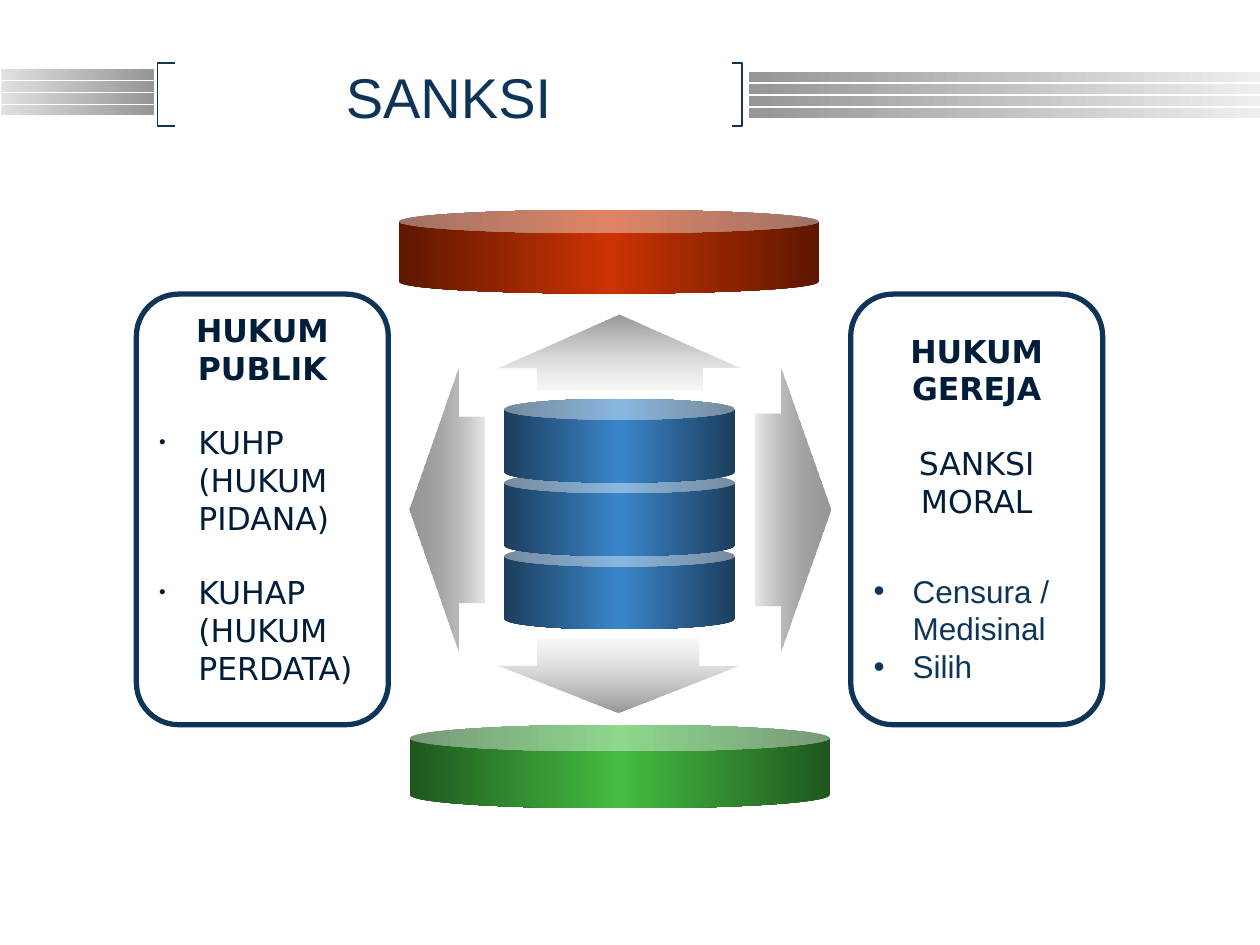
from lxml import etree
from pptx import Presentation
from pptx.dml.color import RGBColor
from pptx.enum.shapes import MSO_SHAPE
from pptx.enum.text import MSO_ANCHOR, PP_ALIGN
from pptx.oxml import parse_xml
from pptx.oxml.ns import nsdecls, qn
from pptx.util import Cm, Pt

RECTANGLE = MSO_SHAPE.RECTANGLE
ROUNDED = MSO_SHAPE.ROUNDED_RECTANGLE
CAN = MSO_SHAPE.CAN
LEFT, RIGHT = MSO_SHAPE.LEFT_ARROW, MSO_SHAPE.RIGHT_ARROW
UP, DOWN = MSO_SHAPE.UP_ARROW, MSO_SHAPE.DOWN_ARROW
CENTER, ALIGN_LEFT = PP_ALIGN.CENTER, PP_ALIGN.LEFT
MIDDLE, TOP = MSO_ANCHOR.MIDDLE, MSO_ANCHOR.TOP

NAVY, INK, GREY = "0E3558", "001D3A", "969696"
DARKEN = "<a:gamma/><a:shade val='46275'/><a:invGamma/>"
FADE = "<a:alpha val='12000'/>"
TITLE = {"name": "Arial", "size": Pt(32), "color": NAVY}
HEADING = {"name": "DejaVu Sans", "size": Pt(18), "bold": True, "color": INK}
BODY = {**HEADING, "bold": False}
SANCTION = {"name": "Arial", "size": Pt(18), "color": NAVY}
GAP = Pt(21)


def rgb(value):
    return RGBColor.from_string(value)


def fill_gradient(shape, stops, angle=0):
    marks = "".join(
        f"<a:gs pos='{position * 1000}'><a:srgbClr val='{color}'>{change}</a:srgbClr></a:gs>"
        for position, color, change in stops
    )
    gradient = parse_xml(
        f"<a:gradFill {nsdecls('a')} rotWithShape='1'><a:gsLst>{marks}</a:gsLst>"
        f"<a:lin ang='{angle * 60000}' scaled='1'/></a:gradFill>"
    )
    shape.element.spPr.find(qn("a:prstGeom")).addnext(gradient)


def add_block(page, kind, frame, stops, angle=0, adjustments=()):
    block = page.shapes.add_shape(kind, *map(Cm, frame))
    block.shadow.inherit = False
    for index, value in enumerate(adjustments):
        block.adjustments[index] = value
    fill_gradient(block, stops, angle)
    block.line.fill.background()


def add_can(page, frame, color, depth):
    stops = [(0, color, DARKEN), (50, color, ""), (100, color, DARKEN)]
    add_block(page, CAN, frame, stops, adjustments=[depth])


def add_stripes(page, left, top, width, step, colors):
    stops = [(0, colors[0], ""), (100, colors[1], "")]
    for row in range(4):
        add_block(page, RECTANGLE, (left, top + row * step, width, 0.21), stops)


def add_bracket(page, tip, spine):
    top, bottom = Cm(1.27), Cm(2.54)
    builder = page.shapes.build_freeform(Cm(tip), top)
    corners = [(Cm(spine), top), (Cm(spine), bottom), (Cm(tip), bottom)]
    builder.add_line_segments(corners, close=False)
    bracket = builder.convert_to_shape()
    bracket.shadow.inherit = False
    bracket.fill.background()
    bracket.line.color.rgb = rgb(NAVY)
    bracket.line.width = Pt(0.75)


def add_panel(page, left):
    panel = page.shapes.add_shape(ROUNDED, Cm(left), Cm(5.93), Cm(5.08), Cm(8.68))
    panel.shadow.inherit = False
    panel.adjustments[0] = 0.167
    panel.fill.background()
    panel.line.color.rgb = rgb(NAVY)
    panel.line.width = Pt(3)


def add_bullet(para, scale):
    properties = para._p.get_or_add_pPr()
    properties.set("marL", str(Cm(0.79)))
    properties.set("indent", str(Cm(-0.79)))
    etree.SubElement(properties, qn("a:buSzPct")).set("val", str(scale * 1000))
    etree.SubElement(properties, qn("a:buFont")).set("typeface", "Arial")
    etree.SubElement(properties, qn("a:buChar")).set("char", "•")


def add_text(page, frame, lines, anchor=TOP, spacing=None):
    box = page.shapes.add_textbox(*map(Cm, frame)).text_frame
    box.word_wrap = True
    box.vertical_anchor = anchor
    for index, (words, style, bullet, before) in enumerate(lines):
        para = box.paragraphs[0] if index == 0 else box.add_paragraph()
        para.alignment = ALIGN_LEFT if bullet else CENTER
        if spacing:
            para.line_spacing = spacing
        if before:
            para.space_before = before
        if bullet:
            add_bullet(para, bullet)
        span = para.add_run()
        span.text = words
        for name, value in style.items():
            if name == "color":
                span.font.color.rgb = rgb(value)
            else:
                setattr(span.font, name, value)


def add_header(page):
    add_stripes(page, 0.03, 1.4, 3.07, 0.24, ("E0E0E0", GREY))
    add_bracket(page, 3.53, 3.18)
    add_stripes(page, 15.09, 1.45, 10.31, 0.24, (GREY, "EEEEEE"))
    add_bracket(page, 14.76, 14.96)
    add_text(page, (3.33, 1.27, 11.43, 1.35), [("SANKSI", TITLE, None, None)], MIDDLE)


def add_diagram(page):
    for row in range(3):
        add_can(page, (10.16, 11 - row * 1.48, 4.66, 1.69), "3B86CB", 0.25)
    add_can(page, (8.04, 4.23, 8.47, 1.69), "CC3300", 0.28)
    add_can(page, (8.26, 14.61, 8.47, 1.69), "44BD41", 0.32)

    solid = GREY, ""
    shaded = GREY, DARKEN + FADE
    pale = "C5C5C5", FADE
    arrows = [
        (LEFT, (8.26, 7.41, 1.5, 5.72), solid, shaded, 0, (0.656, 0.652)),
        (RIGHT, (15.24, 7.41, 1.5, 5.72), shaded, solid, 0, (0.677, 0.662)),
        (UP, (10.06, 6.35, 4.87, 1.5), solid, pale, 90, (0.684, 0.708)),
        (DOWN, (10.02, 12.9, 4.87, 1.46), pale, solid, 90, (0.671, 0.641)),
    ]
    for kind, frame, start, end, angle, adjustments in arrows:
        add_block(page, kind, frame, [(0, *start), (100, *end)], angle, adjustments)


def add_panels(page):
    for left in (2.75, 17.15):
        add_panel(page, left)
    public_law = [
        ("HUKUM PUBLIK", HEADING, None, None),
        ("KUHP (HUKUM PIDANA)", BODY, 60, GAP),
        ("KUHAP (HUKUM PERDATA)", BODY, 60, GAP),
    ]
    church_law = [
        ("HUKUM GEREJA", HEADING, None, None),
        ("SANKSI MORAL", BODY, None, GAP),
    ]
    sanctions = [
        ("Censura / Medisinal", SANCTION, 100, None),
        ("Silih", SANCTION, 100, None),
    ]
    add_text(page, (2.96, 6.14, 4.66, 7.95), public_law, spacing=Pt(21.6))
    add_text(page, (17.36, 6.56, 4.66, 4.11), church_law, spacing=Pt(21.6))
    add_text(page, (17.36, 11.4, 4.87, 2.57), sanctions, spacing=Pt(21.6))


def main():
    deck = Presentation()
    deck.slide_width, deck.slide_height = Cm(25.4), Cm(19.05)
    page = deck.slides.add_slide(deck.slide_layouts[6])
    add_header(page)
    add_diagram(page)
    add_panels(page)
    deck.save("out.pptx")


if __name__ == "__main__":
    main()
